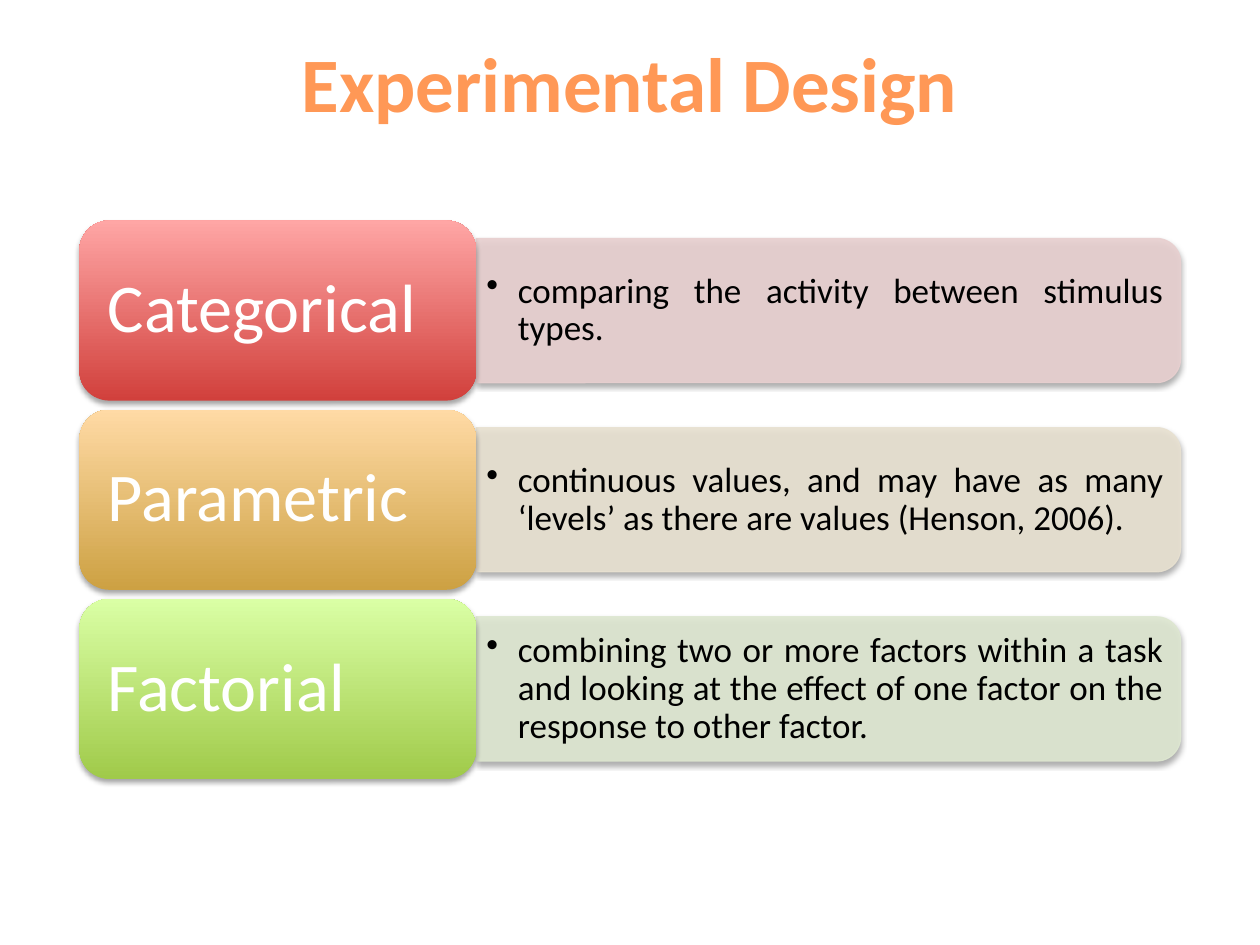
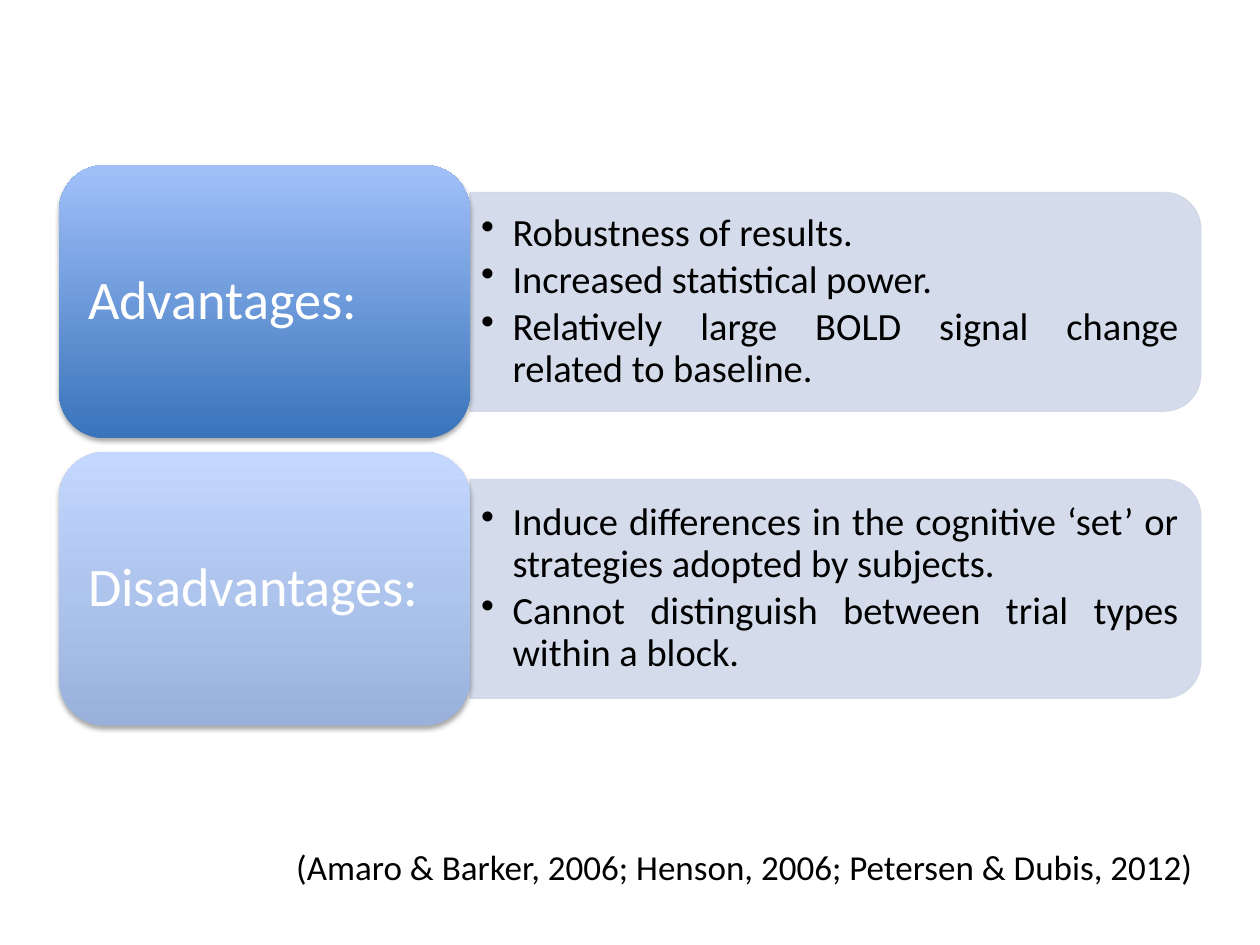
from dataclasses import dataclass

from lxml.etree import SubElement
from pptx import Presentation
from pptx.dml.color import RGBColor
from pptx.enum.shapes import MSO_SHAPE as Shape
from pptx.enum.text import MSO_ANCHOR as Anchor, MSO_AUTO_SIZE as AutoSize, PP_ALIGN as Align
from pptx.oxml.ns import qn
from pptx.util import Inches, Pt

FONT = "Calibri"
ORANGE, BLACK, WHITE = "FF9856", "000000", "FFFFFF"
ROW_PITCH = 1.05
PANEL_RATIO = 0.8
CORNER_INSET = 0.05
INSET_PER_POINT = 0.004


@dataclass
class Row:
    label: str
    points: list[str]
    dark: str
    light: str
    panel: str


@dataclass
class Layout:
    left: float
    top: float
    label_width: float
    panel_width: float
    height: float
    label_size: int
    point_size: int
    panel_shadow: bool


DESIGNS = [
    Row("Categorical", ["comparing the activity between stimulus types."],
        "D1403C", "FFA6A5", "E8D0D0"),
    Row("Parametric", ["continuous values, and may have as many ‘levels’ as there are "
                       "values (Henson, 2006)."],
        "CDA143", "FFDAA5", "E8E1D1"),
    Row("Factorial", ["combining two or more factors within a task and looking at the "
                      "effect of one factor on the response to other factor."],
        "A0CA4A", "DAFFA5", "DEE7D1"),
]
DESIGN_LAYOUT = Layout(0.63, 1.75, 3.15, 5.59, 1.43, 39, 20, True)

TRADE_OFFS = [
    Row("Advantages:", ["Robustness of results.", "Increased statistical power.",
                        "Relatively large BOLD signal change related to baseline."],
        "3974BA", "A1C0FA", "D0D8E8"),
    Row("Disadvantages:", ["Induce differences in the cognitive ‘set’ or strategies "
                           "adopted by subjects.",
                           "Cannot distinguish between trial types within a block."],
        "9AB2DB", "C3D7FF", "D0D8E8"),
]
TRADE_OFF_LAYOUT = Layout(0.47, 1.31, 3.26, 5.8, 2.17, 31, 22, False)


def rgb(color: str) -> RGBColor:
    return RGBColor.from_string(color)


def place(sp, left: float, top: float, width: float, height: float) -> None:
    sp.left, sp.top = Inches(left), Inches(top)
    sp.width, sp.height = Inches(width), Inches(height)


def write(sp, *lines: str, size: int, color: str = BLACK, bold: bool = False,
          align: Align = Align.CENTER, anchor: Anchor = Anchor.TOP, wrap: bool = True,
          spacing: float = 1.0, after: float = 0, inset: float = 0.1,
          bullet: bool = False) -> None:
    tf = sp.text_frame
    tf.word_wrap, tf.auto_size, tf.vertical_anchor = wrap, AutoSize.NONE, anchor
    tf.margin_left = tf.margin_right = Inches(inset)
    tf.margin_top = tf.margin_bottom = Inches(inset / 2)
    for i, line in enumerate(lines):
        p = tf.paragraphs[0] if i == 0 else tf.add_paragraph()
        p.alignment, p.line_spacing, p.space_after = align, spacing, Pt(after)
        r = p.add_run()
        r.text = line
        r.font.name, r.font.size, r.font.bold = FONT, Pt(size), bold
        r.font.color.rgb = rgb(color)
        if bullet:
            pPr = p._p.get_or_add_pPr()
            pPr.set("marL", str(Inches(0.25)))
            pPr.set("indent", str(Inches(-0.25)))
            SubElement(pPr, qn("a:buChar"), char="•")


def set_alpha(color_element, percent: int) -> None:
    SubElement(color_element, qn("a:alpha"), val=str(percent * 1000))


def add_shadow(sp) -> None:
    effects = sp.element.spPr.find(qn("a:effectLst"))
    shadow = SubElement(effects, qn("a:outerShdw"), blurRad=str(Pt(3.1)),
                        dist=str(Pt(1.8)), dir="5400000", rotWithShape="0")
    set_alpha(SubElement(shadow, qn("a:srgbClr"), val=BLACK), 35)


def add_panel(slide, row: Row, layout: Layout, middle: float) -> None:
    left, width = layout.left + layout.label_width, layout.panel_width
    height = layout.height * PANEL_RATIO
    sp = slide.shapes.add_shape(Shape.ROUND_2_SAME_RECTANGLE, 0, 0, 0, 0)
    place(sp, left + (width - height) / 2, middle - width / 2, height, width)
    sp.rotation = 90
    sp.fill.solid()
    sp.fill.fore_color.rgb = sp.line.color.rgb = rgb(row.panel)
    sp.line.width = Pt(0.75)
    for color_element in list(sp.element.spPr.iter(qn("a:srgbClr"))):
        set_alpha(color_element, 90)
    sp.shadow.inherit = False
    if layout.panel_shadow:
        add_shadow(sp)

    corner = height * CORNER_INSET
    box = slide.shapes.add_textbox(0, 0, 0, 0)
    place(box, left, middle - height / 2 + corner, width - corner, height - 2 * corner)
    size = layout.point_size
    write(box, *row.points, size=size, align=Align.JUSTIFY, anchor=Anchor.MIDDLE,
          spacing=0.9, after=size * 0.15, inset=size * INSET_PER_POINT, bullet=True)


def add_label(slide, row: Row, layout: Layout, top: float) -> None:
    sp = slide.shapes.add_shape(Shape.ROUNDED_RECTANGLE, 0, 0, 0, 0)
    place(sp, layout.left, top, layout.label_width, layout.height)
    sp.fill.gradient()
    sp.fill.gradient_angle = 90
    for stop, color in zip(sp.fill.gradient_stops, (row.dark, row.light)):
        stop.color.rgb = rgb(color)
    sp.line.fill.background()
    sp.shadow.inherit = False
    add_shadow(sp)
    size = layout.label_size
    write(sp, row.label, size=size, color=WHITE, align=Align.JUSTIFY,
          anchor=Anchor.MIDDLE, spacing=0.9, inset=size * INSET_PER_POINT)


def add_rows(slide, rows: list[Row], layout: Layout) -> None:
    for i, row in enumerate(rows):
        top = layout.top + i * layout.height * ROW_PITCH
        add_panel(slide, row, layout, top + layout.height / 2)
        add_label(slide, row, layout, top)


def main() -> None:
    prs = Presentation()
    prs.slide_width, prs.slide_height = Inches(10), Inches(7.5)
    title_only, blank = prs.slide_layouts[5], prs.slide_layouts[6]

    design = prs.slides.add_slide(title_only)
    title = design.shapes.title
    place(title, 2.27, 0.23, 5.46, 0.84)
    write(title, "Experimental Design", size=44, color=ORANGE, bold=True, wrap=False)
    add_rows(design, DESIGNS, DESIGN_LAYOUT)

    trade_off = prs.slides.add_slide(blank)
    citation = trade_off.shapes.add_textbox(0, 0, 0, 0)
    place(citation, 2.09, 6.66, 7.64, 0.44)
    write(citation, "(Amaro & Barker, 2006; Henson, 2006; Petersen & Dubis, 2012)", size=20)
    add_rows(trade_off, TRADE_OFFS, TRADE_OFF_LAYOUT)

    prs.save("out.pptx")


if __name__ == "__main__":
    main()
